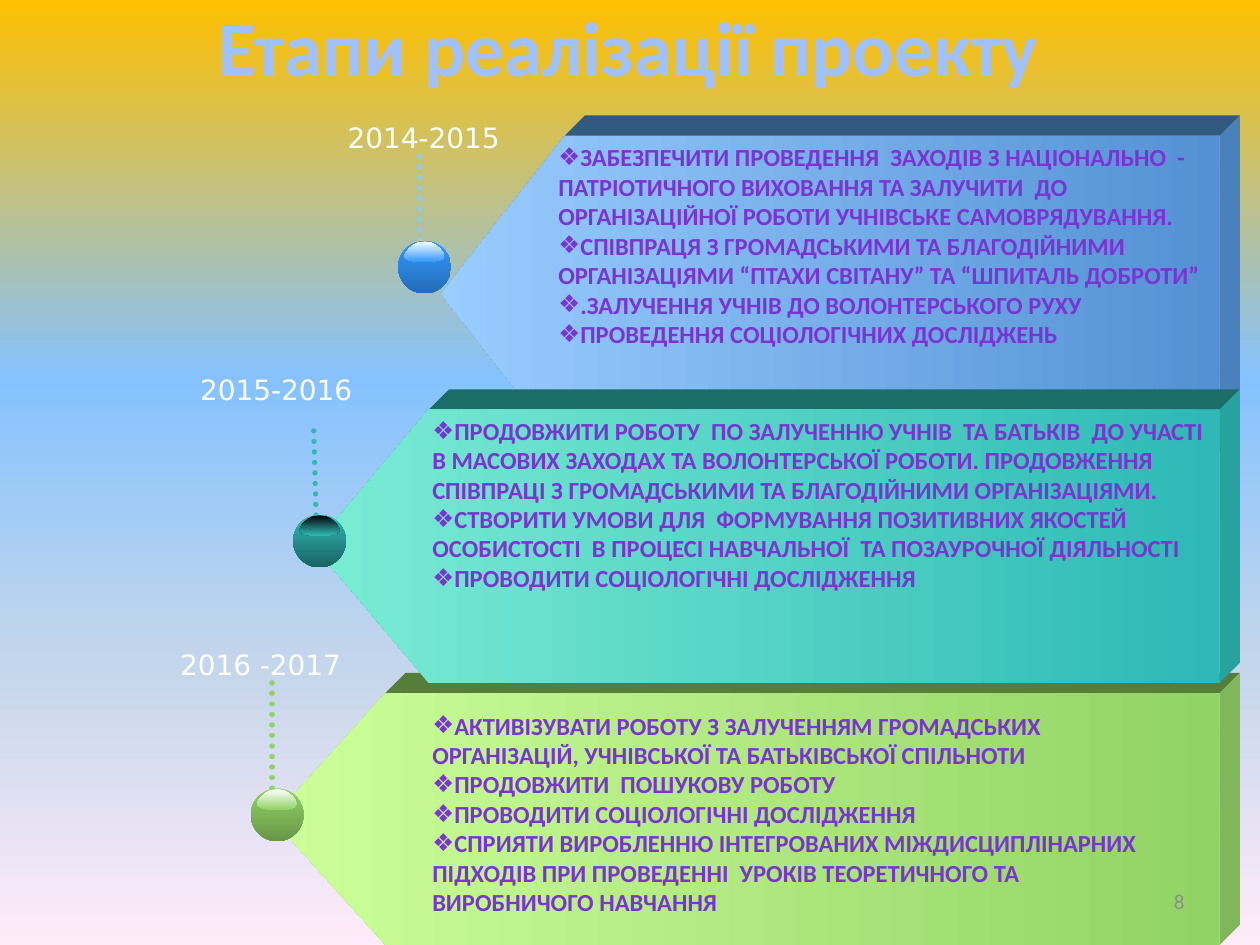
from copy import deepcopy
from dataclasses import dataclass

from pptx import Presentation
from pptx.dml.color import RGBColor as RGB
from pptx.enum.dml import MSO_LINE_DASH_STYLE as DASH
from pptx.enum.shapes import MSO_CONNECTOR as CONN, MSO_SHAPE as SHAPE
from pptx.enum.text import MSO_ANCHOR as ANCHOR, MSO_AUTO_SIZE as AUTO, PP_ALIGN as ALIGN
from pptx.oxml.ns import qn
from pptx.oxml.xmlchemy import OxmlElement
from pptx.util import Pt


@dataclass(frozen=True)
class Theme:
    """Fonts, type sizes and colours of the slide."""
    font: str = "Calibri"
    label_font: str = "DejaVu Sans"
    title_size: int = 44
    label_size: int = 16
    list_size: int = 14
    number_size: int = 12
    title: str = "A0C1FF"
    label: str = "FFFFFF"
    list: str = "7B34D2"
    number: str = "8C8C8C"
    background: tuple = ((0, "FFC000"), (40, "85C2FF"), (70, "C4D6EB"), (100, "FFEBFA"))


@dataclass(frozen=True)
class Stage:
    """Texts, places and colours of one project stage."""
    years: str
    label_at: tuple
    dots: tuple
    ball_at: tuple
    arrow: tuple
    adj: float
    list_at: tuple
    list_idx: int
    face: tuple
    sides: tuple
    dot_color: str
    ball: tuple
    gloss: tuple
    items: tuple


RIGHT, DEPTH, BALL = 697, 11.5, 30.2
GLOSS = ((0, 0), (3.6, 0.5), (6.5, 2), (8.9, 4.1), (10.8, 6.5), (11.5, 8.3),
         (11, 9.5), (9.4, 10.5), (6.5, 11.3), (2.9, 11.6))

STAGES = (
    Stage("2014-2015", (191.5, 65.5, 104, 26.6), (239.8, 89.3, 239.8, 154),
          (227.5, 137.5), (252, 77.5, 181), 0.391, (311.8, 77.8, 396.7, 147.6), 1,
          ("5491D4", "99CCFF"), ("32597F", "4A80BB"), "86CEF6",
          ("3399FF", "246DB6"), ("FCFDFF", "3399FF"),
          ("ЗАБЕЗПЕЧИТИ ПРОВЕДЕННЯ  ЗАХОДІВ З НАЦІОНАЛЬНО  - ПАТРІОТИЧНОГО ВИХОВАННЯ "
           "ТА ЗАЛУЧИТИ  ДО ОРГАНІЗАЦІЙНОЇ РОБОТИ УЧНІВСЬКЕ САМОВРЯДУВАННЯ.",
           "СПІВПРАЦЯ З ГРОМАДСЬКИМИ ТА БЛАГОДІЙНИМИ ОРГАНІЗАЦІЯМИ “ПТАХИ СВІТАНУ” "
           "ТА “ШПИТАЛЬ ДОБРОТИ”",
           ".ЗАЛУЧЕННЯ УЧНІВ ДО ВОЛОНТЕРСЬКОГО РУХУ",
           "ПРОВЕДЕННЯ СОЦІОЛОГІЧНИХ ДОСЛІДЖЕНЬ")),
    Stage("2016 -2017", (95.8, 366.5, 109.4, 26.6), (155.5, 390.2, 155.5, 462.2),
          (143.3, 450.5), (155.5, 396, 144), 0.45, (239.8, 402.5, 421.2, 147.6), 4,
          ("92D365", "CCFF99"), ("567E3A", "7FB75A"), "92D365",
          ("92D365", "689748"), ("FFFFFF", "92D365"),
          ("АКТИВІЗУВАТИ РОБОТУ З ЗАЛУЧЕННЯМ ГРОМАДСЬКИХ ОРГАНІЗАЦІЙ, УЧНІВСЬКОЇ "
           "ТА БАТЬКІВСЬКОЇ СПІЛЬНОТИ",
           "ПРОДОВЖИТИ  ПОШУКОВУ РОБОТУ",
           "ПРОВОДИТИ СОЦІОЛОГІЧНІ ДОСЛІДЖЕННЯ",
           "СПРИЯТИ ВИРОБЛЕННЮ ІНТЕГРОВАНИХ МІЖДИСЦИПЛІНАРНИХ ПІДХОДІВ ПРИ ПРОВЕДЕННІ  "
           "УРОКІВ ТЕОРЕТИЧНОГО ТА ВИРОБНИЧОГО НАВЧАННЯ")),
    Stage("2015-2016", (107.3, 209.5, 103.7, 26.6), (179.3, 246.2, 181.4, 321),
          (167.5, 294), (179.5, 234, 156.2), 0.42, (239.8, 234, 457.2, 108.7), 2,
          ("2EB9B6", "7AECD4"), ("1C6D6A", "27A39F"), "2EB9B6",
          ("2EB9B6", "196462"), ("000000", "2EB9B6"),
          ("ПРОДОВЖИТИ РОБОТУ  ПО ЗАЛУЧЕННЮ УЧНІВ  ТА БАТЬКІВ  ДО УЧАСТІ В МАСОВИХ "
           "ЗАХОДАХ ТА ВОЛОНТЕРСЬКОЇ РОБОТИ. ПРОДОВЖЕННЯ СПІВПРАЦІ З ГРОМАДСЬКИМИ "
           "ТА БЛАГОДІЙНИМИ ОРГАНІЗАЦІЯМИ.",
           "СТВОРИТИ УМОВИ ДЛЯ  ФОРМУВАННЯ ПОЗИТИВНИХ ЯКОСТЕЙ ОСОБИСТОСТІ  В ПРОЦЕСІ "
           "НАВЧАЛЬНОЇ  ТА ПОЗАУРОЧНОЇ ДІЯЛЬНОСТІ",
           "ПРОВОДИТИ СОЦІОЛОГІЧНІ ДОСЛІДЖЕННЯ")),
)


def write(p, text, *, font, size, color, bold=False, align=ALIGN.LEFT, bullet=None):
    """Fill a paragraph with one formatted run."""
    if bullet:
        pPr = p._p.get_or_add_pPr()
        pPr.set("marL", "0")
        pPr.set("indent", "0")
        bu = OxmlElement("a:buChar")
        bu.set("char", bullet)
        pPr.append(bu)
    p.alignment = align
    p.space_before = Pt(0)
    r = p.add_run()
    r.text = text
    r.font.name, r.font.size, r.font.bold = font, Pt(size), bold
    r.font.color.rgb = RGB.from_string(color)


def blend(fill, owner, stops, angle):
    """Give a fill a linear gradient with any number of stops."""
    fill.gradient()
    fill.gradient_angle = (360 - angle) % 360
    gs = owner.element.find(".//" + qn("a:gsLst"))
    for _ in stops[2:]:
        gs.append(deepcopy(gs[0]))
    for stop, (pos, color) in zip(fill.gradient_stops, stops):
        stop.position = pos / 100
        stop.color.rgb = RGB.from_string(color)


class Deck:
    """Holds the theme and the current slide."""

    def __init__(self, prs, theme):
        """Add a slide with its background."""
        self.t = theme
        self.s = prs.slides.add_slide(prs.slide_layouts[4])
        blend(self.s.background.fill, self.s, theme.background, 90)

    def place(self, sp, at):
        """Move and size a shape."""
        sp.left, sp.top, sp.width, sp.height = map(Pt, at)

    def paint(self, sp, colors, angle=90):
        """Fill a shape with one colour or a pair, without line or shadow."""
        sp.shadow.inherit = False
        sp.line.fill.background()
        if len(colors) == 1:
            sp.fill.solid()
            sp.fill.fore_color.rgb = RGB.from_string(colors[0])
        else:
            blend(sp.fill, sp, tuple(zip((0, 100), colors)), angle)

    def title(self, text, at):
        """Fill the title placeholder."""
        sp = self.s.shapes.title
        self.place(sp, at)
        tf = sp.text_frame
        tf.vertical_anchor, tf.auto_size = ANCHOR.MIDDLE, AUTO.NONE
        write(tf.paragraphs[0], text, font=self.t.font, size=self.t.title_size,
              color=self.t.title, bold=True, align=ALIGN.CENTER)

    def bullets(self, idx, items, at):
        """Fill a body placeholder and bring it to the front."""
        sp = next(ph for ph in self.s.placeholders if ph.placeholder_format.idx == idx)
        self.place(sp, at)
        sp.element.getparent().append(sp.element)
        tf = sp.text_frame
        tf.vertical_anchor, tf.auto_size = ANCHOR.TOP, AUTO.NONE
        for i, item in enumerate(items):
            p = tf.add_paragraph() if i else tf.paragraphs[0]
            write(p, item, font=self.t.font, size=self.t.list_size,
                  color=self.t.list, bold=True, bullet="❖")

    def text(self, text, at, wrap=False, anchor=ANCHOR.TOP, **fmt):
        """Add a text box of one paragraph."""
        sp = self.s.shapes.add_textbox(*map(Pt, at))
        tf = sp.text_frame
        tf.word_wrap, tf.vertical_anchor = wrap, anchor
        write(tf.paragraphs[0], text, **fmt)

    def outline(self, points, colors):
        """Add a closed freeform."""
        pts = [(Pt(x), Pt(y)) for x, y in points]
        fb = self.s.shapes.build_freeform(*pts[0])
        fb.add_line_segments(pts[1:], close=True)
        self.paint(fb.convert_to_shape(), colors)

    def arrow(self, x, y, h, adj, face, sides):
        """Add a left-pointing block with a top and a right side."""
        shoulder, back, up = x + adj * h, RIGHT + DEPTH, y - DEPTH
        top, side = sides
        self.outline([(shoulder, y), (shoulder + DEPTH, up), (back, up), (RIGHT, y)], (top,))
        self.outline([(RIGHT, y), (back, up), (back, y + h - DEPTH), (RIGHT, y + h)], (side,))
        sp = self.s.shapes.add_shape(SHAPE.PENTAGON, *map(Pt, (x, y, RIGHT - x, h)))
        sp.adjustments[0] = adj
        sp.element.spPr.xfrm.set("flipH", "1")
        self.paint(sp, face, 0)

    def dots(self, ends, color):
        """Add a dotted connector."""
        c = self.s.shapes.add_connector(CONN.STRAIGHT, *map(Pt, ends))
        c.line.width, c.line.dash_style = Pt(3), DASH.ROUND_DOT
        c.line.color.rgb = RGB.from_string(color)
        c.line._get_or_add_ln().set("cap", "rnd")
        c.element.spPr.append(OxmlElement("a:effectLst"))

    def ball(self, x, y, colors, gloss):
        """Add a ball with a glossy highlight."""
        self.paint(self.s.shapes.add_shape(SHAPE.OVAL, *map(Pt, (x, y, BALL, BALL))), colors)
        half = [(x + BALL / 2 + dx, y + 0.5 + dy) for dx, dy in GLOSS]
        mirror = [(2 * x + BALL - px, py) for px, py in reversed(half[1:])]
        self.outline(half + mirror, gloss)


def main():
    """Build the slide."""
    prs = Presentation()
    prs.slide_width, prs.slide_height = Pt(720), Pt(540)
    t = Theme()
    d = Deck(prs, t)
    d.title("Етапи реалізації проекту", (35.3, -18.7, 648, 90))
    for st in STAGES:
        d.arrow(*st.arrow, st.adj, st.face, st.sides)
    for st in STAGES:
        d.text(st.years, st.label_at, font=t.label_font, size=t.label_size, color=t.label)
        d.dots(st.dots, st.dot_color)
        d.ball(*st.ball_at, st.ball, st.gloss)
        d.bullets(st.list_idx, st.items, st.list_at)
    d.text("8", (516.2, 500.4, 167.8, 28.8), wrap=True, anchor=ANCHOR.MIDDLE,
           font=t.font, size=t.number_size, color=t.number, align=ALIGN.RIGHT)
    for ph in list(d.s.placeholders):
        if not ph.text_frame.text:
            ph.element.getparent().remove(ph.element)
    prs.save("out.pptx")


if __name__ == "__main__":
    main()
